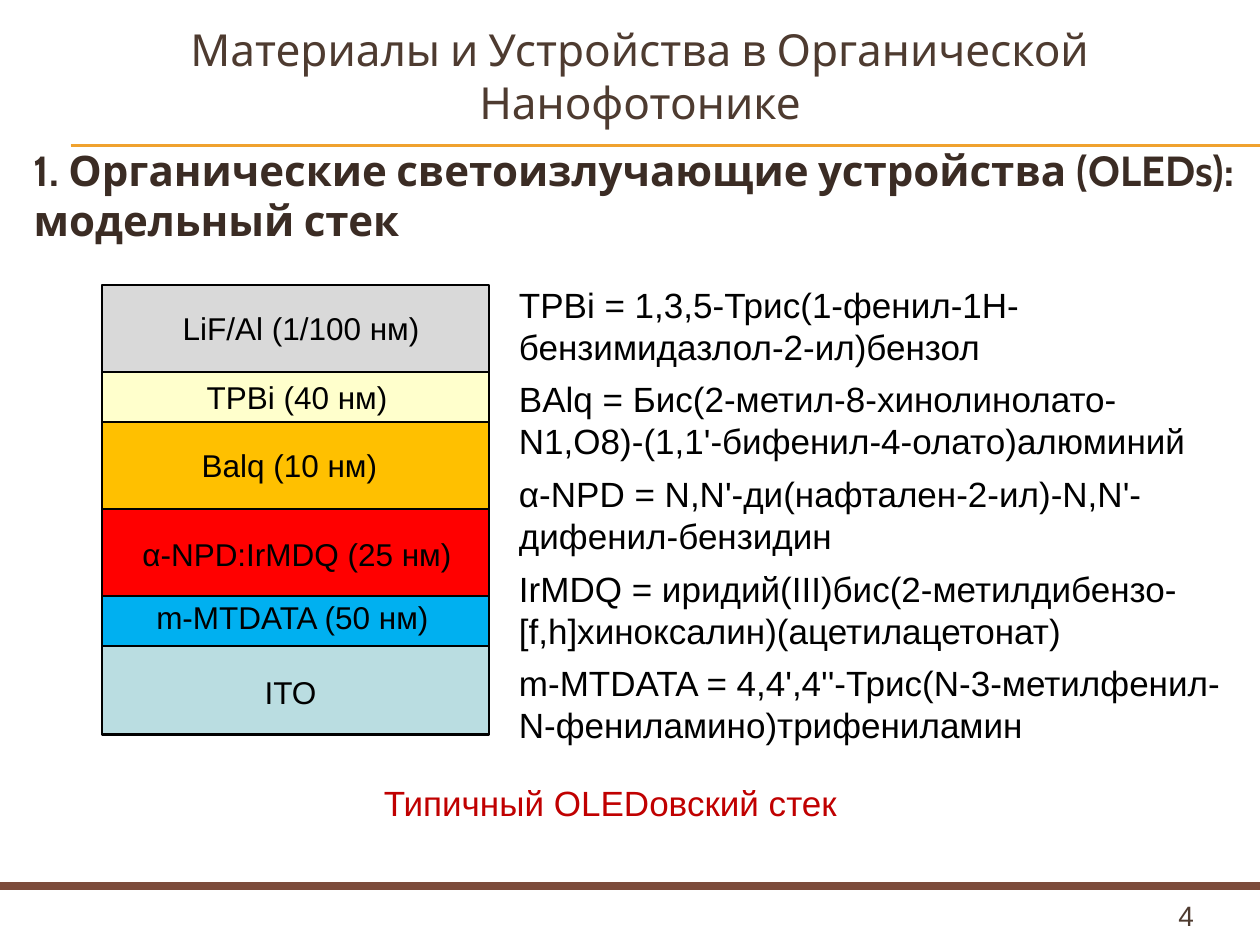
import pptx
import pptx.util
import pptx.dml.color
import pptx.enum.shapes
import pptx.enum.text
import pptx.oxml.ns
import lxml.etree

Inches = pptx.util.Inches
Pt = pptx.util.Pt
RGBColor = pptx.dml.color.RGBColor
Align = pptx.enum.text.PP_ALIGN
Anchor = pptx.enum.text.MSO_ANCHOR

BLACK = RGBColor(0x00, 0x00, 0x00)
GOLD = RGBColor(0xF0, 0xA2, 0x2E)
BROWN = RGBColor(0x7C, 0x4B, 0x3B)
TITLE_BROWN = RGBColor(0x4E, 0x3B, 0x30)
HEADING_BROWN = RGBColor(0x3B, 0x2C, 0x24)
CAPTION_RED = RGBColor(0xC0, 0x00, 0x00)
GREY = RGBColor(0xD9, 0xD9, 0xD9)
CREAM = RGBColor(0xFF, 0xFF, 0xCC)
AMBER = RGBColor(0xFF, 0xC0, 0x00)
RED = RGBColor(0xFF, 0x00, 0x00)
BLUE = RGBColor(0x00, 0xB0, 0xF0)
PALE_TEAL = RGBColor(0xBA, 0xDD, 0xE1)

presentation = pptx.Presentation()
presentation.slide_width = Inches(10)
presentation.slide_height = Inches(7.5)
slide = presentation.slides.add_slide(presentation.slide_layouts[5])


def write_text(shape, texts, size, color, font="Arial", bold=False, align=Align.LEFT, after=0):
    frame = shape.text_frame
    frame.word_wrap = True
    for index, text in enumerate(texts):
        paragraph = frame.add_paragraph() if index else frame.paragraphs[0]
        paragraph.alignment = align
        paragraph.space_after = Pt(after)
        run = paragraph.add_run()
        run.text = text
        run.font.name = font
        run.font.size = Pt(size)
        run.font.bold = bold
        run.font.color.rgb = color
    return frame


def add_rule(left, top, color, width):
    rule = slide.shapes.add_connector(
        pptx.enum.shapes.MSO_CONNECTOR.STRAIGHT,
        Inches(left), Inches(top), Inches(10), Inches(top))
    rule.line.color.rgb = color
    rule.line.width = Pt(width)
    lxml.etree.SubElement(rule._element.spPr, pptx.oxml.ns.qn("a:effectLst"))


add_rule(0.56, 1.15, GOLD, 0.75)
add_rule(0.56, 1.16, GOLD, 0.75)
add_rule(0, 7.03, BROWN, 4.5)

title = slide.shapes.title
title.left, title.top = Inches(0.33), Inches(0.14)
title.width, title.height = Inches(9.5), Inches(0.92)
title_frame = write_text(title, ["Материалы и Устройства в Органической Нанофотонике"],
                         25.2, TITLE_BROWN, "Cabin", align=Align.CENTER)
title_frame.auto_size = pptx.enum.text.MSO_AUTO_SIZE.NONE
title_frame.vertical_anchor = Anchor.MIDDLE

heading = slide.shapes.add_textbox(Inches(0.01), Inches(1.09), Inches(10), Inches(0.91))
heading_frame = write_text(
    heading, ["1. Органические светоизлучающие устройства (OLEDs): модельный стек"],
    24, HEADING_BROWN, "Cabin", bold=True, after=6)
heading_frame.vertical_anchor = Anchor.MIDDLE
heading_frame.paragraphs[0]._p.get_or_add_pPr().set("marL", str(Inches(0.16)))

layers = [
    ("LiF/Al (1/100 нм)", GREY, 2.26, 0.69, 1.45, 2.45, 1.9),
    ("TPBi (40 нм)", CREAM, 2.95, 0.4, 1.64, 3, 1.45),
    ("Balq (10 нм)", AMBER, 3.35, 0.69, 1.6, 3.54, 1.41),
    ("α-NPD:IrMDQ (25 нм)", RED, 4.04, 0.69, 1.13, 4.25, 2.48),
    ("m-MTDATA (50 нм)", BLUE, 4.73, 0.4, 1.24, 4.75, 2.19),
    ("ITO", PALE_TEAL, 5.13, 0.7, 2.1, 5.34, 0.42),
]
for name, color, top, height, label_left, label_top, label_width in layers:
    layer = slide.shapes.add_shape(
        pptx.enum.shapes.MSO_SHAPE.RECTANGLE,
        Inches(0.81), Inches(top), Inches(3.07), Inches(height))
    layer.shadow.inherit = False
    layer.fill.solid()
    layer.fill.fore_color.rgb = color
    layer.line.color.rgb = BLACK
    layer.line.width = Pt(1.25)

    label = slide.shapes.add_textbox(
        Inches(label_left), Inches(label_top), Inches(label_width), Inches(0.3))
    label_frame = write_text(label, [name], 18, BLACK)
    label_frame.word_wrap = False
    label_frame.margin_left = label_frame.margin_right = 0
    label_frame.margin_top = label_frame.margin_bottom = 0

definitions = slide.shapes.add_textbox(Inches(4.02), Inches(2.2), Inches(5.88), Inches(3.8))
write_text(definitions, [
    "TPBi = 1,3,5-Трис(1-фенил-1H-бензимидазлол-2-ил)бензол",
    "BAlq = Бис(2-метил-8-хинолинолато-N1,O8)-(1,1'-бифенил-4-олато)алюминий",
    "α-NPD = N,N'-ди(нафтален-2-ил)-N,N'-дифенил-бензидин",
    "IrMDQ = иридий(III)бис(2-метилдибензо-[f,h]хиноксалин)(ацетилацетонат)",
    "m-MTDATA = 4,4',4''-Трис(N-3-метилфенил-N-фениламино)трифениламин",
], 20, BLACK, after=6)

caption = slide.shapes.add_textbox(Inches(0.43), Inches(6.15), Inches(8.83), Inches(0.44))
write_text(caption, ["Типичный OLEDовский стек"], 20, CAPTION_RED, align=Align.CENTER)

slide_number = slide.shapes.add_textbox(Inches(9), Inches(7.08), Inches(0.83), Inches(0.27))
write_text(slide_number, ["4"], 16, TITLE_BROWN, align=Align.CENTER)

presentation.save("out.pptx")
